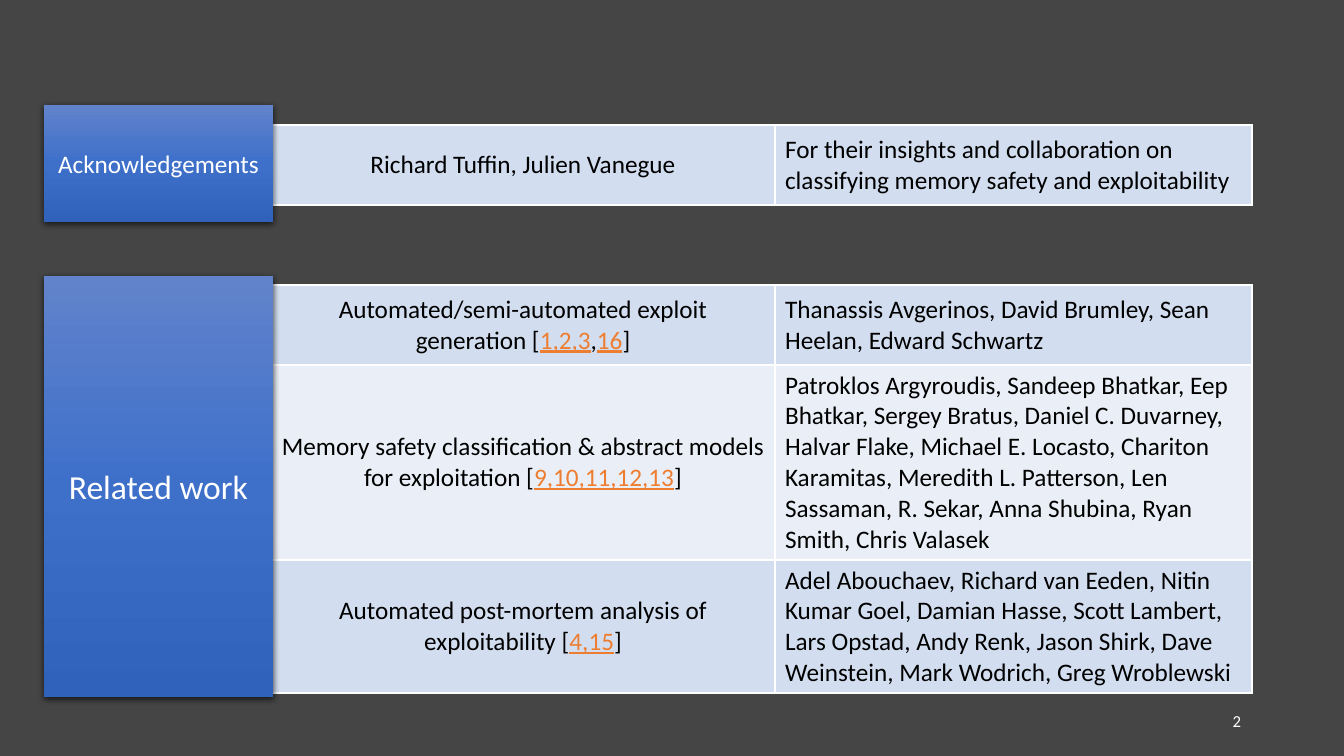
from copy import deepcopy
from dataclasses import dataclass

from lxml.etree import SubElement
from pptx import Presentation
from pptx.dml.color import RGBColor
from pptx.enum.shapes import MSO_SHAPE
from pptx.enum.text import MSO_ANCHOR, PP_ALIGN
from pptx.oxml import parse_xml
from pptx.oxml.ns import nsdecls, qn
from pptx.util import Emu, Pt

EMU_PER_PX = 914400 / 100.8


@dataclass(frozen=True)
class Theme:
    """Colours, font and type sizes of the slide."""
    font: str = "Calibri"
    background: str = "454545"
    light: str = "FFFFFF"
    dark: str = "000000"
    reference: str = "ED7D31"
    bands: tuple = ("D2DEEF", "EAEFF7")
    gradient: tuple = ((0, "6183CB"), (0.5, "3E70CA"), (1, "3062BB"))
    small: int = 12
    body: int = 18
    heading: int = 24


THEME = Theme()

ACKNOWLEDGEMENTS = [
    (["Richard Tuffin, Julien Vanegue"],
     "For their insights and collaboration on classifying memory safety and exploitability"),
]
RELATED_WORK = [
    (["Automated/semi-automated exploit generation [", "1,2,3", ",", "16", "]"],
     "Thanassis Avgerinos, David Brumley, Sean Heelan, Edward Schwartz"),
    (["Memory safety classification & abstract models for exploitation [",
      "9,10,11,12,13", "]"],
     "Patroklos Argyroudis, Sandeep Bhatkar, Eep Bhatkar, Sergey Bratus, "
     "Daniel C. Duvarney, Halvar Flake, Michael E. Locasto, Chariton Karamitas, "
     "Meredith L. Patterson, Len Sassaman, R. Sekar, Anna Shubina, Ryan Smith, "
     "Chris Valasek"),
    (["Automated post-mortem analysis of exploitability [", "4,15", "]"],
     "Adel Abouchaev, Richard van Eeden, Nitin Kumar Goel, Damian Hasse, "
     "Scott Lambert, Lars Opstad, Andy Renk, Jason Shirk, Dave Weinstein, "
     "Mark Wodrich, Greg Wroblewski"),
]


def px(length):
    """Turn pixels into EMU."""
    return Emu(round(length * EMU_PER_PX))


def rgb(code):
    """Turn a hex code into a colour."""
    return RGBColor.from_string(code)


def write(frame, *pieces, size=THEME.body, color=THEME.dark, align=PP_ALIGN.LEFT):
    """Write one paragraph in which every second piece is a reference."""
    frame.word_wrap = True
    paragraph = frame.paragraphs[0]
    paragraph.alignment = align
    for index, piece in enumerate(pieces):
        is_reference = index % 2 == 1
        run = paragraph.add_run()
        run.text = piece
        run.font.name = THEME.font
        run.font.size = Pt(size)
        run.font.underline = is_reference
        run.font.color.rgb = rgb(THEME.reference if is_reference else color)


def style_cell(cell, band):
    """Give a cell its band colour, thin borders and middle anchor."""
    cell.vertical_anchor = MSO_ANCHOR.MIDDLE
    cell.fill.solid()
    cell.fill.fore_color.rgb = rgb(band)
    properties = cell._tc.get_or_add_tcPr()
    for position, side in enumerate("LRTB"):
        properties.insert(position, parse_xml(
            f'<a:ln{side} w="12700" {nsdecls("a")}><a:solidFill>'
            f'<a:srgbClr val="{THEME.light}"/></a:solidFill></a:ln{side}>'))


def add_topics(slide, left, top, column_widths, row_heights, topics):
    """Place a table of topics and the people behind them."""
    table = slide.shapes.add_table(
        len(topics), len(column_widths), px(left), px(top),
        px(sum(column_widths)), px(sum(row_heights))).table
    table.first_row = table.horz_banding = False
    for column, width in zip(table.columns, column_widths):
        column.width = px(width)
    for index, (topic, people) in enumerate(topics):
        table.rows[index].height = px(row_heights[index])
        topic_cell, people_cell = table.rows[index].cells
        for cell in (topic_cell, people_cell):
            style_cell(cell, THEME.bands[index % 2])
        write(topic_cell.text_frame, *topic, align=PP_ALIGN.CENTER)
        write(people_cell.text_frame, people)


def add_label(slide, left, top, width, height, title, size):
    """Place a shaded label with a soft shadow."""
    label = slide.shapes.add_shape(
        MSO_SHAPE.RECTANGLE, px(left), px(top), px(width), px(height))
    label.line.fill.background()
    label.fill.gradient()
    label.fill.gradient_angle = 270
    first_stop = label._element.spPr.find(".//" + qn("a:gs"))
    first_stop.addnext(deepcopy(first_stop))
    for stop, (position, color) in zip(label.fill.gradient_stops, THEME.gradient):
        stop.position = position
        stop.color.rgb = rgb(color)
    label.shadow.inherit = False
    effects = label._element.spPr.find(qn("a:effectLst"))
    shadow = SubElement(effects, qn("a:outerShdw"), blurRad="57150", dist="19050",
                        dir="5400000", algn="ctr", rotWithShape="0")
    shade = SubElement(shadow, qn("a:srgbClr"), val=THEME.dark)
    SubElement(shade, qn("a:alpha"), val="63000")
    label.text_frame.vertical_anchor = MSO_ANCHOR.MIDDLE
    write(label.text_frame, title, size=size, color=THEME.light, align=PP_ALIGN.CENTER)


def add_section(slide, left, top, label_height, table_offset, row_heights,
                title, size, topics):
    """Place a label and the table that starts under its right edge."""
    label_width = 229
    add_topics(slide, left + label_width - 2, top + table_offset, (504, 477),
               row_heights, topics)
    add_label(slide, left, top, label_width, label_height, title, size)


def add_page_number(slide, left, top, width, height, number):
    """Place the page number at the right of its box."""
    box = slide.shapes.add_textbox(px(left), px(top), px(width), px(height))
    box.text_frame.vertical_anchor = MSO_ANCHOR.MIDDLE
    write(box.text_frame, number, size=THEME.small, color=THEME.light,
          align=PP_ALIGN.RIGHT)


def main():
    """Build and save the slide."""
    deck = Presentation()
    deck.slide_width, deck.slide_height = px(1344), px(756)
    slide = deck.slides.add_slide(deck.slide_layouts[6])
    slide.background.fill.solid()
    slide.background.fill.fore_color.rgb = rgb(THEME.background)
    add_page_number(slide, 890, 701, 361, 40, "2")
    add_section(slide, 44, 105, 117, 20, (80,),
                "Acknowledgements", THEME.body, ACKNOWLEDGEMENTS)
    add_section(slide, 44, 276, 421, 9, (80, 195, 133),
                "Related work", THEME.heading, RELATED_WORK)
    deck.save("out.pptx")


if __name__ == "__main__":
    main()
